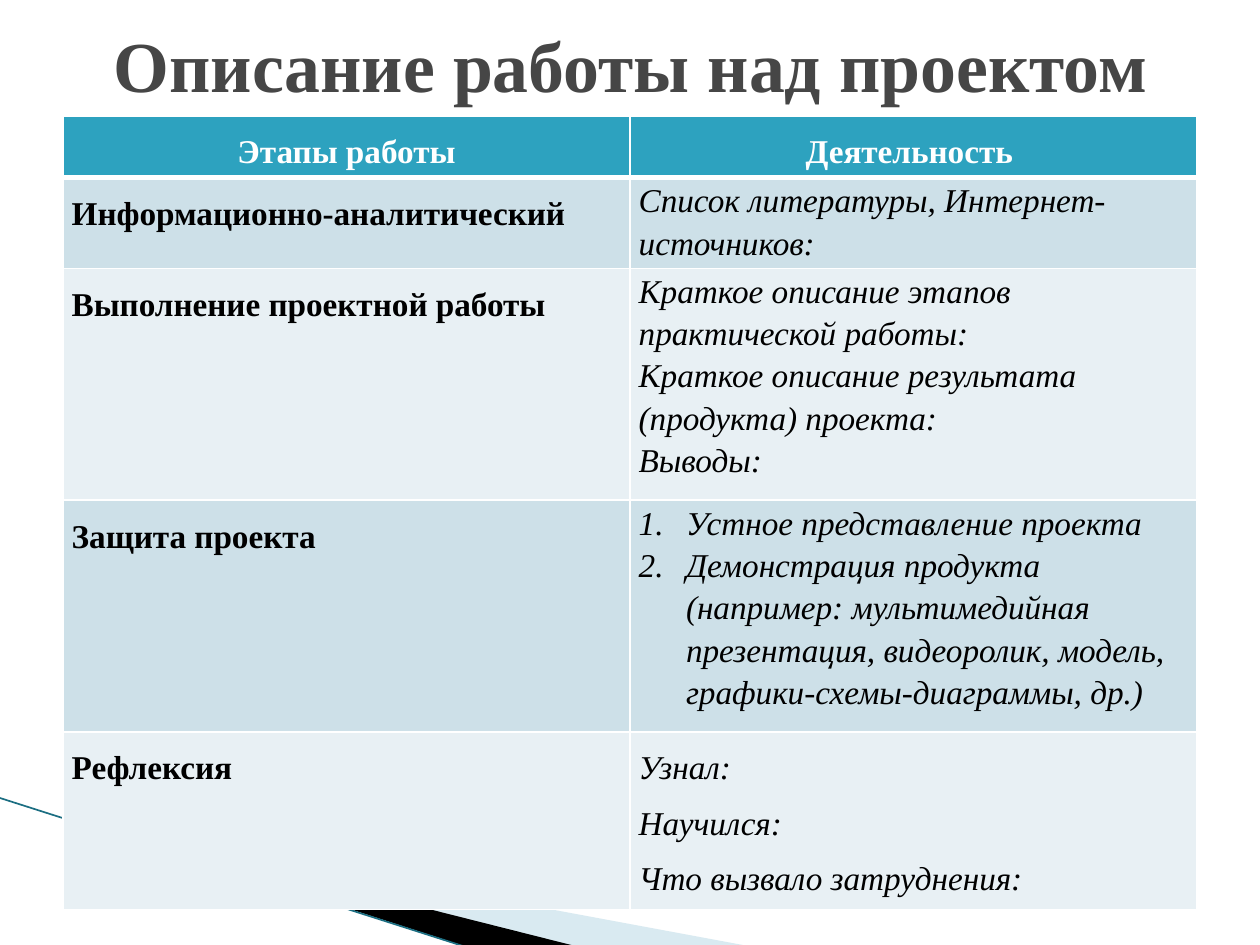
from lxml.etree import SubElement
from pptx import Presentation
from pptx.dml.color import RGBColor
from pptx.enum.shapes import MSO_CONNECTOR
from pptx.enum.text import MSO_ANCHOR, PP_ALIGN
from pptx.oxml import parse_xml
from pptx.oxml.ns import nsdecls, qn
from pptx.util import Pt

FONT = "Times New Roman"
COLORS = {
    "title": "464646", "header": "2DA2BF", "odd": "CDE0E8", "even": "E8F0F4",
    "white": "FFFFFF", "black": "000000", "wedge": "A0CBDC", "line": "1B6E82",
}
TITLE = "Описание работы над проектом"
HEADERS = ["Этапы работы", "Деятельность "]
STAGES = [
    {"name": "Информационно-аналитический", "height": 51.84, "spacing": 1.15,
     "details": ["Список литературы, Интернет-источников:"]},
    {"name": "Выполнение проектной работы", "height": 132.48, "spacing": 1.15,
     "details": ["Краткое описание этапов практической работы:",
                 "Краткое описание результата (продукта) проекта:",
                 "Выводы:"]},
    {"name": "Защита проекта", "height": 132.48, "spacing": 1.15, "numbered": True,
     "details": ["Устное представление проекта",
                 "Демонстрация продукта (например: мультимедийная презентация, "
                 "видеоролик, модель, графики-схемы-диаграммы, др.)"]},
    {"name": "Рефлексия", "height": 101.52, "spacing": 1.5,
     "details": ["Узнал:", "Научился:", "Что вызвало затруднения:"]},
]
HEADER_HEIGHT = 35.28
COLUMN_WIDTH = 324
TABLE_LEFT, TABLE_TOP = 36, 66.24
WEDGES = [
    ("wedge", 40, [(39.6, 468.5), (428.4, 540.7), (328.3, 540.7)]),
    ("black", 100, [(38.2, 467.3), (329, 540.7), (267.8, 541.4)]),
]
LINE_ENDS = [(-0.7, 455.8), (267.1, 541.4)]


def color(name):
    return RGBColor.from_string(COLORS[name])


def add_wedge(page, name, opacity, points):
    corners = [(Pt(x), Pt(y)) for x, y in points]
    builder = page.shapes.build_freeform(*corners[0], scale=1.0)
    builder.add_line_segments(corners[1:], close=True)
    wedge = builder.convert_to_shape()
    wedge.shadow.inherit = False
    wedge.line.fill.background()
    wedge.fill.solid()
    wedge.fill.fore_color.rgb = color(name)
    if opacity < 100:
        tint = wedge.fill._xPr.find(qn("a:solidFill"))[0]
        SubElement(tint, qn("a:alpha"), val=str(opacity * 1000))


def add_line(page):
    start, end = [(Pt(x), Pt(y)) for x, y in LINE_ENDS]
    line = page.shapes.add_connector(MSO_CONNECTOR.STRAIGHT, *start, *end)
    line.line.color.rgb = color("line")
    line.line.width = Pt(0.95)
    SubElement(line._element.spPr, qn("a:effectLst"))


def set_borders(cell, bottom=1, top=1):
    properties = cell._tc.get_or_add_tcPr()
    widths = {"lnL": 1, "lnR": 1, "lnT": top, "lnB": bottom}
    for index, (side, width) in enumerate(widths.items()):
        properties.insert(index, parse_xml(
            f'<a:{side} {nsdecls("a")} w="{Pt(width)}"><a:solidFill>'
            f'<a:srgbClr val="{COLORS["white"]}"/></a:solidFill></a:{side}>'))


def fill_cell(cell, texts, fill, spacing=1.5, text_color="black", bold=False,
              italic=False, align=PP_ALIGN.LEFT, numbered=False):
    cell.margin_left = cell.margin_right = Pt(5)
    cell.margin_top = cell.margin_bottom = 0
    cell.fill.solid()
    cell.fill.fore_color.rgb = color(fill)
    frame = cell.text_frame
    for index, text in enumerate(texts):
        para = frame.add_paragraph() if index else frame.paragraphs[0]
        para.text = text
        para.alignment = align
        para.line_spacing = spacing
        if numbered:
            properties = para._p.get_or_add_pPr()
            properties.set("marL", str(Pt(27)))
            properties.set("indent", str(Pt(-27)))
            SubElement(properties, qn("a:buFont"), typeface="+mj-lt")
            SubElement(properties, qn("a:buAutoNum"), type="arabicPeriod")
        font = para.font
        font.name, font.size = FONT, Pt(19)
        font.bold, font.italic = bold, italic
        font.color.rgb = color(text_color)


def add_stage_table(page):
    heights = [HEADER_HEIGHT] + [stage["height"] for stage in STAGES]
    table = page.shapes.add_table(
        len(heights), len(HEADERS), Pt(TABLE_LEFT), Pt(TABLE_TOP),
        Pt(COLUMN_WIDTH * len(HEADERS)), Pt(sum(heights))).table
    for column in table.columns:
        column.width = Pt(COLUMN_WIDTH)
    for row, height in zip(table.rows, heights):
        row.height = Pt(height)
    for index, header in enumerate(HEADERS):
        cell = table.cell(0, index)
        fill_cell(cell, [header], "header", text_color="white", bold=True,
                  align=PP_ALIGN.CENTER)
        set_borders(cell, bottom=3)
    for row, stage in enumerate(STAGES, 1):
        fill = "odd" if row % 2 else "even"
        name_cell, detail_cell = table.cell(row, 0), table.cell(row, 1)
        fill_cell(name_cell, [stage["name"]], fill, bold=True)
        fill_cell(detail_cell, stage["details"], fill, stage["spacing"],
                  italic=True, numbered=stage.get("numbered", False))
        for cell in (name_cell, detail_cell):
            set_borders(cell, top=3 if row == 1 else 1)


def format_title(title):
    title.left, title.top, title.width, title.height = Pt(36.7), 0, Pt(648), Pt(72.7)
    frame = title.text_frame
    frame.text = TITLE
    frame.vertical_anchor = MSO_ANCHOR.MIDDLE
    para = frame.paragraphs[0]
    para.alignment = PP_ALIGN.CENTER
    para.font.name, para.font.size, para.font.bold = FONT, Pt(41), True
    para.font.color.rgb = color("title")


def main():
    deck = Presentation()
    deck.slide_width, deck.slide_height = Pt(720), Pt(540)
    page = deck.slides.add_slide(deck.slide_layouts[5])
    format_title(page.shapes.title)
    for wedge in WEDGES:
        add_wedge(page, *wedge)
    add_line(page)
    add_stage_table(page)
    deck.save("out.pptx")


if __name__ == "__main__":
    main()
